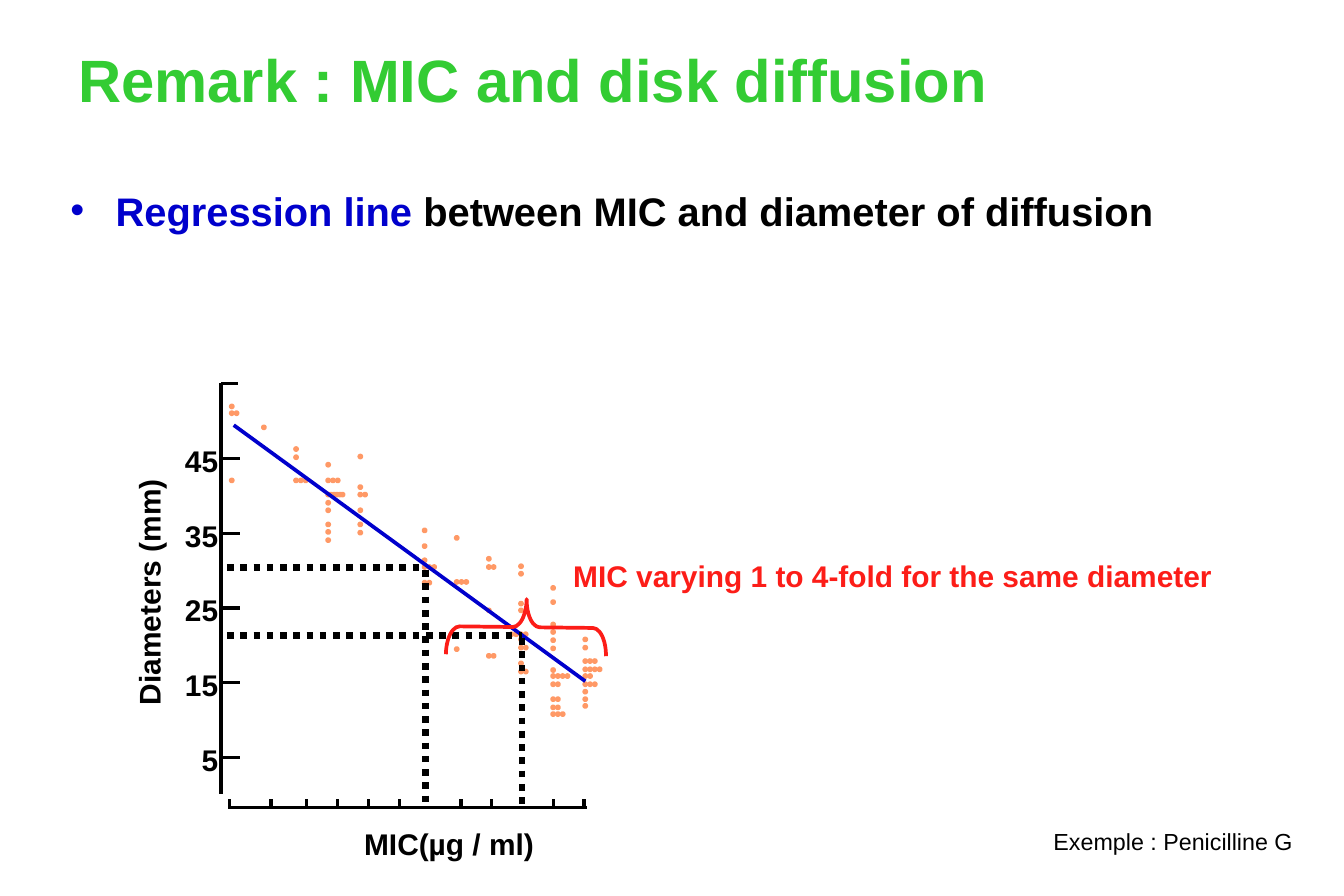
from dataclasses import dataclass

from lxml.etree import SubElement
from pptx import Presentation
from pptx.dml.color import RGBColor
from pptx.enum.dml import MSO_LINE
from pptx.enum.shapes import MSO_CONNECTOR, MSO_SHAPE
from pptx.enum.text import MSO_ANCHOR, PP_ALIGN
from pptx.oxml.ns import qn
from pptx.util import Inches, Pt


@dataclass(frozen=True)
class Theme:
    font: str = "Arial"
    ink: str = "000000"
    blue: str = "0000CC"
    green: str = "33CC33"
    red: str = "FC1D18"
    dot_fill: str = "FE9B03"
    dot_line: str = "FF9966"
    title: int = 36
    body: int = 24
    label: int = 18
    note: int = 14
    axis: float = 2
    trend: float = 2.25
    guide: float = 4


@dataclass(frozen=True)
class Grid:
    left: float
    top: float
    cell: float

    def at(self, col, row):
        return Inches(self.left + col * self.cell), Inches(self.top + row * self.cell)

    def box(self, col, row, cols, rows):
        return *self.at(col, row), Inches(cols * self.cell), Inches(rows * self.cell)


@dataclass(frozen=True)
class Plot(Grid):
    axis_col: float = 85
    axis_top: float = 21
    axis_bottom: float = 365
    mic_row: float = 376
    mic_start: float = 93
    mic_end: float = 391
    tick: float = 14
    mic_tick: float = 8
    first_dilution: float = 93
    dilution_step: float = 26.9
    top_diameter: float = 45
    top_row: float = 84
    mm_step: float = 6.25

    def col(self, dilution):
        return self.first_dilution + dilution * self.dilution_step

    def row(self, mm):
        return self.top_row + (self.top_diameter - mm) * self.mm_step


T = Theme()
WIDTH, HEIGHT = 11.25, 7.5
PAGE = Grid(0, 0, WIDTH / 45)
PLOT = Plot(4 * PAGE.cell, 12 * PAGE.cell, 18 * PAGE.cell / 450)

STRAINS_BY_DILUTION = {
    0: {52: 1, 51.1: 2, 42.1: 1},
    1: {49.2: 1},
    2: {46.3: 1, 45.2: 1, 42.1: 3},
    3: {44.2: 1, 42.1: 3, 40.2: 6, 39.1: 1, 38.1: 1, 36.2: 1, 35.2: 1, 34.1: 1},
    4: {45.3: 1, 41.2: 1, 40.2: 2, 38.1: 1, 36.2: 1, 35.1: 1},
    6: {35.4: 1, 33.3: 1, 31.4: 1, 30.5: 3, 28.4: 2},
    7: {34.4: 1, 28.5: 3, 19.5: 1},
    8: {31.6: 1, 30.5: 2, 24.7: 1, 18.6: 2},
    8.7: {21.5: 4},
    9: {30.6: 1, 29.6: 1, 25.6: 1, 24.7: 1, 20.8: 1, 19.7: 2, 17.6: 1, 16.5: 2},
    10: {27.7: 1, 25.8: 1, 22.8: 1, 21.8: 1, 20.7: 1, 19.6: 1, 16.7: 1,
         15.9: 4, 14.8: 2, 12.8: 2, 11.7: 2, 10.8: 3},
    11: {20.8: 1, 19.7: 1, 17.9: 3, 16.8: 4, 15.9: 2, 14.8: 3, 13.8: 1,
         12.8: 1, 11.9: 1},
}
DOT_SIZE, DOT_PITCH, DOT_SPREAD = 2, 4, 12
REGRESSION = [(0.1, 49.5), (11.04, 15.2)]
READINGS = [(6.06, 30.4), (9.07, 21.3)]

DIAMETER_TICKS = range(45, 0, -10)
EARLY_MIC_TICKS = [92, 127]
LAST_MIC_TICK, MIC_TICK_STEP, REGULAR_MIC_TICKS = 389, 25.8, 10
TICKS_UNDER_READINGS = (2, 5)
LABEL_HEIGHT, LABEL_RIGHT, LABEL_RISE = 37, 93, 15
LABEL_PADDING, DIGIT_WIDTH = 20, 14

REGIONS = {
    "title": PAGE.box(-1.72, 0.96, 39.12, 3.12),
    "statement": PAGE.box(1.96, 6.04, 38.84, 2.36),
    "callout": PAGE.box(18.8, 18.48, 24.16, 1.6),
    "example": PAGE.box(34.88, 27.6, 9.08, 1.24),
    "mic title": PLOT.box(195, 390, 164, LABEL_HEIGHT),
    "diameter title": PLOT.box(-79, 176, 211, LABEL_HEIGHT),
    "brace": PLOT.box(317, 158, 47, 134),
}


def assign(target, values):
    for name, value in values.items():
        setattr(target, name, value)


def add_text(s, box, runs, size, bold=True, frame=None, para=None, turn=0):
    sp = s.shapes.add_textbox(*box)
    sp.rotation = turn
    tf = sp.text_frame
    assign(tf, {"word_wrap": False, **(frame or {})})
    p = tf.paragraphs[0]
    assign(p, para or {"line_spacing": 0.9})
    for text, color in runs:
        r = p.add_run()
        r.text = text
        assign(r.font, {"name": T.font, "size": Pt(size), "bold": bold})
        r.font.color.rgb = RGBColor.from_string(color)
    return p


def add_line(shapes, grid, start, end, color=T.ink, width=T.axis, dash=None):
    sp = shapes.add_connector(MSO_CONNECTOR.STRAIGHT, *grid.at(*start), *grid.at(*end))
    assign(sp.line, {"width": Pt(width), "dash_style": dash})
    sp.line.color.rgb = RGBColor.from_string(color)
    SubElement(sp._element.spPr, qn("a:effectLst"))


def add_outlined(s, kind, box, color, width, fill=None):
    sp = s.shapes.add_shape(kind, *box)
    sp.shadow.inherit = False
    sp.line.color.rgb = RGBColor.from_string(color)
    sp.line.width = Pt(width)
    if fill:
        sp.fill.solid()
        sp.fill.fore_color.rgb = RGBColor.from_string(fill)
    else:
        sp.fill.background()
    return sp


def add_title(s, box):
    side, edge = Inches(0.12), Inches(0.08)
    add_text(s, box, [("Remark : MIC and disk diffusion", T.green)], T.title,
             frame={"word_wrap": True, "vertical_anchor": MSO_ANCHOR.MIDDLE,
                    "margin_left": side, "margin_right": side,
                    "margin_top": edge, "margin_bottom": edge},
             para={"alignment": PP_ALIGN.CENTER, "line_spacing": 1.1})


def add_statement(s, box):
    p = add_text(s, box, [("Regression line ", T.blue),
                          ("between MIC and diameter of diffusion", T.ink)],
                 T.body, frame={"word_wrap": True},
                 para={"space_before": Pt(T.body * 0.2)})
    hang = Inches(0.38)
    pPr = p._p.get_or_add_pPr()
    pPr.set("marL", str(hang))
    pPr.set("indent", str(-hang))
    SubElement(pPr, qn("a:buFont")).set("typeface", T.font)
    SubElement(pPr, qn("a:buChar")).set("char", "•")


def add_strains(s, plot):
    for dilution, counts in STRAINS_BY_DILUTION.items():
        for mm, count in counts.items():
            pitch = min(DOT_PITCH, DOT_SPREAD / max(count - 1, 1))
            for i in range(count):
                box = plot.box(plot.col(dilution) + i * pitch,
                               plot.row(mm) - DOT_SIZE / 2, DOT_SIZE, DOT_SIZE)
                add_outlined(s, MSO_SHAPE.OVAL, box, T.dot_line, T.axis, T.dot_fill)


def add_regression(s, plot):
    start, end = [(plot.col(dilution), plot.row(mm)) for dilution, mm in REGRESSION]
    add_line(s.shapes, plot, start, end, T.blue, T.trend)


def add_diameter_axis(s, plot):
    x, top = plot.axis_col, plot.axis_top
    add_line(s.shapes, plot, (x, top), (x, plot.axis_bottom))
    add_line(s.shapes, plot, (x, top), (x + plot.tick, top))
    for mm in DIAMETER_TICKS:
        row, text = plot.row(mm), str(mm)
        add_line(s.shapes, plot, (x + 2, row), (x + 2 + plot.tick, row))
        width = LABEL_PADDING + DIGIT_WIDTH * len(text)
        add_text(s, plot.box(LABEL_RIGHT - width, row - LABEL_RISE, width, LABEL_HEIGHT),
                 [(text, T.ink)], T.label)
    add_text(s, REGIONS["diameter title"], [("Diameters (mm)", T.ink)], T.label, turn=270)


def add_mic_axis(s, plot):
    row = plot.mic_row
    regular = [LAST_MIC_TICK - MIC_TICK_STEP * k for k in range(REGULAR_MIC_TICKS)
               if k not in TICKS_UNDER_READINGS]
    group = s.shapes.add_group_shape()
    add_line(group.shapes, plot, (plot.mic_start, row), (plot.mic_end, row))
    for col in EARLY_MIC_TICKS + regular:
        add_line(group.shapes, plot, (col, row + 1), (col, row + 1 - plot.mic_tick))
    add_text(s, REGIONS["mic title"], [("MIC(µg / ml)", T.ink)], T.label)


def add_readings(s, plot):
    for dilution, mm in READINGS:
        col, row = plot.col(dilution), plot.row(mm)
        for start, end in [((plot.axis_col + 5, row), (col, row)),
                           ((col, row + 2), (col, plot.mic_row - 3))]:
            add_line(s.shapes, plot, start, end, T.ink, T.guide, MSO_LINE.ROUND_DOT)


def add_brace(s, box):
    sp = add_outlined(s, MSO_SHAPE.LEFT_BRACE, box, T.red, T.trend)
    sp.rotation = 90.7
    sp.adjustments[0], sp.adjustments[1] = 0.24, 0.5


def main():
    prs = Presentation()
    assign(prs, {"slide_width": Inches(WIDTH), "slide_height": Inches(HEIGHT)})
    s = prs.slides.add_slide(prs.slide_layouts[6])
    add_statement(s, REGIONS["statement"])
    for add_part in (add_strains, add_regression, add_diameter_axis, add_mic_axis, add_readings):
        add_part(s, PLOT)
    add_brace(s, REGIONS["brace"])
    add_text(s, REGIONS["callout"],
             [("MIC varying 1 to 4-fold for the same diameter", T.red)], T.label,
             frame={"word_wrap": True}, para={"line_spacing": 1.0})
    add_text(s, REGIONS["example"], [("Exemple : Penicilline G", T.ink)], T.note, bold=False)
    add_title(s, REGIONS["title"])
    prs.save("out.pptx")


if __name__ == "__main__":
    main()
